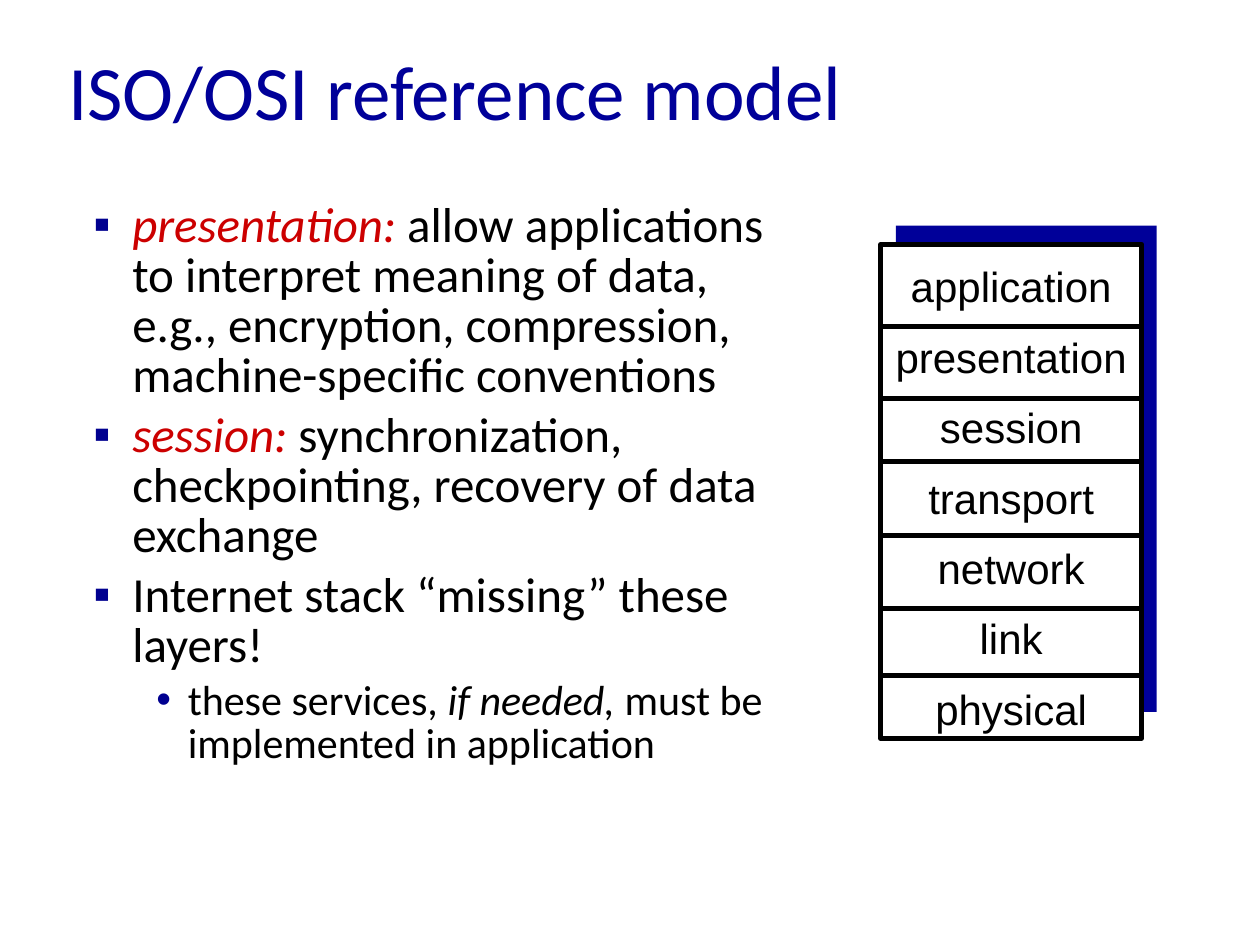
from lxml import etree
from pptx import Presentation
from pptx.dml.color import RGBColor
from pptx.enum import shapes, text
from pptx.oxml.ns import qn
from pptx.util import Inches, Pt

NAVY = RGBColor(0x00, 0x00, 0x99)
BULLET = RGBColor(0x00, 0x00, 0x90)
RED = RGBColor(0xCC, 0x00, 0x00)
BLACK = RGBColor(0x00, 0x00, 0x00)
WHITE = RGBColor(0xFF, 0xFF, 0xFF)

# level, then runs as (text, colour, italic)
BULLETS = [
    (0, [("presentation:", RED, True),
         (" allow applications to interpret meaning of data, e.g., encryption, "
          "compression, machine-specific conventions", BLACK, False)]),
    (0, [("session:", RED, True),
         (" synchronization, checkpointing, recovery of data exchange", BLACK, False)]),
    (0, [("Internet stack “missing” these layers!", BLACK, False)]),
    (1, [("these services, ", BLACK, False), ("if needed,", BLACK, True),
         (" must be implemented in application", BLACK, False)]),
]
# per level: bullet, font size, left margin, hanging indent
LEVELS = [("▪", 28, 0.31, 0.31), ("•", 24, 0.75, 0.25)]

LAYERS = ["application", "presentation", "session", "transport",
          "network", "link", "physical"]
# left end and height of each line between layers
DIVIDERS = [(6.97, 2.59), (6.97, 3.16), (6.98, 3.66),
            (6.98, 4.25), (6.97, 4.83), (6.98, 5.36)]
DIVIDER_WIDTH = 2.07


def place(sp, left, top, width, height):
    sp.left, sp.top = Inches(left), Inches(top)
    sp.width, sp.height = Inches(width), Inches(height)


def style(font, name, size, color, italic=False):
    font.name, font.size, font.italic = name, Pt(size), italic
    font.color.rgb = color


def set_bullet(p, char, margin, hanging):
    pPr = p._p.get_or_add_pPr()
    pPr.set("marL", str(Inches(margin)))
    pPr.set("indent", str(-Inches(hanging)))
    color = etree.SubElement(pPr, qn("a:buClr"))
    etree.SubElement(color, qn("a:srgbClr"), val=str(BULLET))
    etree.SubElement(pPr, qn("a:buFont"), typeface="Arial")
    etree.SubElement(pPr, qn("a:buChar"), char=char)


def add_title(s, title):
    sp = s.shapes.title
    place(sp, 0.44, 0.09, 7.11, 1.25)
    tf = sp.text_frame
    tf.text = title
    tf.auto_size = text.MSO_AUTO_SIZE.NONE
    tf.vertical_anchor = text.MSO_ANCHOR.MIDDLE
    p = tf.paragraphs[0]
    p.alignment = text.PP_ALIGN.LEFT
    style(p.runs[0].font, "Calibri", 44, NAVY)


def add_bullets(s, items):
    sp = s.placeholders[1]
    place(sp, 0.64, 1.56, 5.64, 5.08)
    tf = sp.text_frame
    tf.auto_size = text.MSO_AUTO_SIZE.NONE
    for i, (level, runs) in enumerate(items):
        char, size, margin, hanging = LEVELS[level]
        p = tf.add_paragraph() if i else tf.paragraphs[0]
        p.level = level
        set_bullet(p, char, margin, hanging)
        p.line_spacing = 0.85
        p.space_before = Pt(0.2 * size if i else 0)
        for words, color, italic in runs:
            r = p.add_run()
            r.text = words
            style(r.font, "Calibri", size, color, italic)


def add_box(s, left, top, width, height, fill, line=None):
    sp = s.shapes.add_shape(shapes.MSO_SHAPE.RECTANGLE, Inches(left), Inches(top),
                            Inches(width), Inches(height))
    sp.shadow.inherit = False
    sp.fill.solid()
    sp.fill.fore_color.rgb = fill
    if line is None:
        sp.line.fill.background()
    else:
        sp.line.color.rgb = line
        sp.line.width = Pt(3)


def add_layer_names(s, names):
    sp = s.shapes.add_textbox(Inches(6.94), Inches(2.13), Inches(2.17), Inches(3.73))
    tf = sp.text_frame
    tf.word_wrap = True
    tf.text = "\n".join(names)
    for i, p in enumerate(tf.paragraphs):
        p.alignment = text.PP_ALIGN.CENTER
        p.line_spacing = 0.7
        p.space_before = Pt(20.1 if i else 0)
        style(p.runs[0].font, "Arial", 24, BLACK)


def add_divider(s, left, y):
    line = s.shapes.add_connector(shapes.MSO_CONNECTOR.STRAIGHT, Inches(left), Inches(y),
                                  Inches(left + DIVIDER_WIDTH), Inches(y))
    line.line.color.rgb = BLACK
    line.line.width = Pt(3)
    etree.SubElement(line._element.spPr, qn("a:effectLst"))


def main():
    prs = Presentation()
    prs.slide_width, prs.slide_height = Inches(10), Inches(7.5)
    s = prs.slides.add_slide(prs.slide_layouts[1])

    # Title and explanation
    add_title(s, "ISO/OSI reference model")
    add_bullets(s, BULLETS)

    # Layer stack: backing block, frame, names, dividers
    add_box(s, 7.11, 1.79, 2.07, 3.86, NAVY)
    add_box(s, 6.99, 1.94, 2.07, 3.92, WHITE, BLACK)
    add_layer_names(s, LAYERS)
    for left, y in DIVIDERS:
        add_divider(s, left, y)

    prs.save("out.pptx")


if __name__ == "__main__":
    main()
